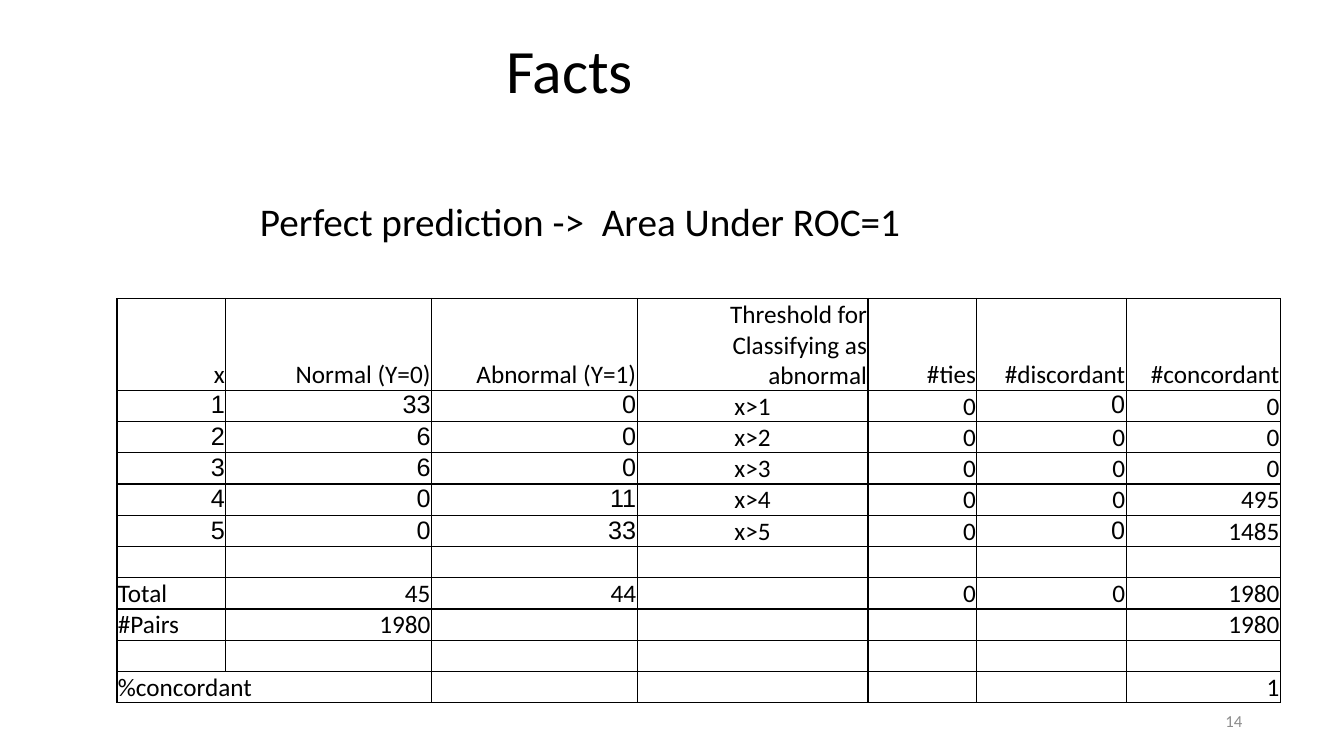
import dataclasses

import pptx
import pptx.dml.color
import pptx.enum.text
import pptx.oxml
import pptx.oxml.ns
import pptx.util

Inches = pptx.util.Inches
Pt = pptx.util.Pt
RGB = pptx.dml.color.RGBColor.from_string
ALIGN = pptx.enum.text.PP_ALIGN
ANCHOR = pptx.enum.text.MSO_ANCHOR


@dataclasses.dataclass(frozen=True)
class Theme:
    """Colours, fonts and type sizes of the slide."""
    ink: str = "000000"
    muted: str = "8C8C8C"
    font: str = "Calibri"
    number_font: str = "Arial"
    title: int = 44
    statement: int = 28
    cell: int = 18
    page: int = 12


THEME = Theme()
COLUMNS = [1.08, 2.04, 2.04, 2.29, 1.08, 1.48, 1.53]
HEADER_HEIGHT, ROW_HEIGHT = 0.91, 0.307
THRESHOLD_COLUMN = 3
ROWS = [
    ["x", "Normal (Y=0)", "Abnormal (Y=1)", "Threshold for Classifying as abnormal",
     "#ties", "#discordant", "#concordant"],
    ["1", "33", "0", "x>1", "0", "0", "0"],
    ["2", "6", "0", "x>2", "0", "0", "0"],
    ["3", "6", "0", "x>3", "0", "0", "0"],
    ["4", "0", "11", "x>4", "0", "0", "495"],
    ["5", "0", "33", "x>5", "0", "0", "1485"],
    [""] * 7,
    ["Total", "45", "44", "", "0", "0", "1980"],
    ["#Pairs", "1980", "", "", "", "", "1980"],
    [""] * 7,
    ["%concordant", "", "", "", "", "", "1"],
]
OBSERVED = {(r, c) for r in range(1, 6) for c in range(3)} | {(1, 5), (5, 5)}


def write(tf, text, size, color=THEME.ink, font=THEME.font, align=ALIGN.LEFT):
    """Fill a text frame with one formatted paragraph."""
    tf.text = text
    p = tf.paragraphs[0]
    p.alignment = align
    for r in p.runs:
        r.font.size = Pt(size)
        r.font.name = font
        r.font.color.rgb = RGB(color)


def place(sp, box):
    """Move a shape to a box in inches."""
    sp.left, sp.top, sp.width, sp.height = map(Inches, box)


def add_title(s, box, text):
    """Put the title in its placeholder."""
    sp = s.shapes.title
    place(sp, box)
    write(sp.text_frame, text, THEME.title)
    sp.text_frame.vertical_anchor = ANCHOR.MIDDLE
    sp.text_frame.paragraphs[0].line_spacing = 0.9


def add_statement(s, box, text):
    """Add the one-line statement above the table."""
    tf = s.shapes.add_textbox(*map(Inches, box)).text_frame
    tf.word_wrap = False
    write(tf, text, THEME.statement)


def add_page_number(s, box, text):
    """Add the page number at the bottom right."""
    tf = s.shapes.add_textbox(*map(Inches, box)).text_frame
    tf.word_wrap = True
    tf.vertical_anchor = ANCHOR.MIDDLE
    write(tf, text, THEME.page, THEME.muted, align=ALIGN.RIGHT)


def outline(cell):
    """Draw thin lines on all four sides of a cell."""
    tcPr = cell._tc.get_or_add_tcPr()
    for i, side in enumerate(("lnL", "lnR", "lnT", "lnB")):
        tcPr.insert(i, pptx.oxml.parse_xml(
            f'<a:{side} {pptx.oxml.ns.nsdecls("a")} w="{Pt(1)}"><a:solidFill>'
            f'<a:srgbClr val="{THEME.ink}"/></a:solidFill></a:{side}>'))


def cell_align(row, col):
    """Return the alignment for a table position."""
    if row and col == THRESHOLD_COLUMN:
        return ALIGN.CENTER
    return ALIGN.LEFT if row > 5 and col == 0 else ALIGN.RIGHT


def add_pairs_table(s, box):
    """Add the table of concordant and discordant pairs."""
    table = s.shapes.add_table(len(ROWS), len(COLUMNS), *map(Inches, box)).table
    table.first_row = table.horz_banding = False
    for column, width in zip(table.columns, COLUMNS):
        column.width = Inches(width)
    for row, texts in enumerate(ROWS):
        table.rows[row].height = Inches(ROW_HEIGHT if row else HEADER_HEIGHT)
        for col, text in enumerate(texts):
            cell = table.cell(row, col)
            observed = (row, col) in OBSERVED
            cell.margin_left = cell.margin_right = cell.margin_top = Inches(0.01)
            cell.margin_bottom = 0
            cell.vertical_anchor = ANCHOR.TOP if observed else ANCHOR.BOTTOM
            cell.fill.background()
            outline(cell)
            write(cell.text_frame, text, THEME.cell,
                  font=THEME.number_font if observed else THEME.font,
                  align=cell_align(row, col))
    last = len(ROWS) - 1
    table.cell(last, 0).merge(table.cell(last, 1))


def main():
    """Build the slide and save it."""
    prs = pptx.Presentation()
    prs.slide_width, prs.slide_height = Inches(13.33), Inches(7.5)
    s = prs.slides.add_slide(prs.slide_layouts[5])
    add_title(s, (4.92, 0, 2.26, 1.45), "Facts")
    add_statement(s, (2.48, 1.91, 6.72, 0.57), "Perfect prediction ->  Area Under ROC=1")
    add_pairs_table(s, (1.16, 2.96, 11.55, 3.98))
    add_page_number(s, (9.42, 6.95, 3, 0.4), "14")
    prs.save("out.pptx")


if __name__ == "__main__":
    main()
